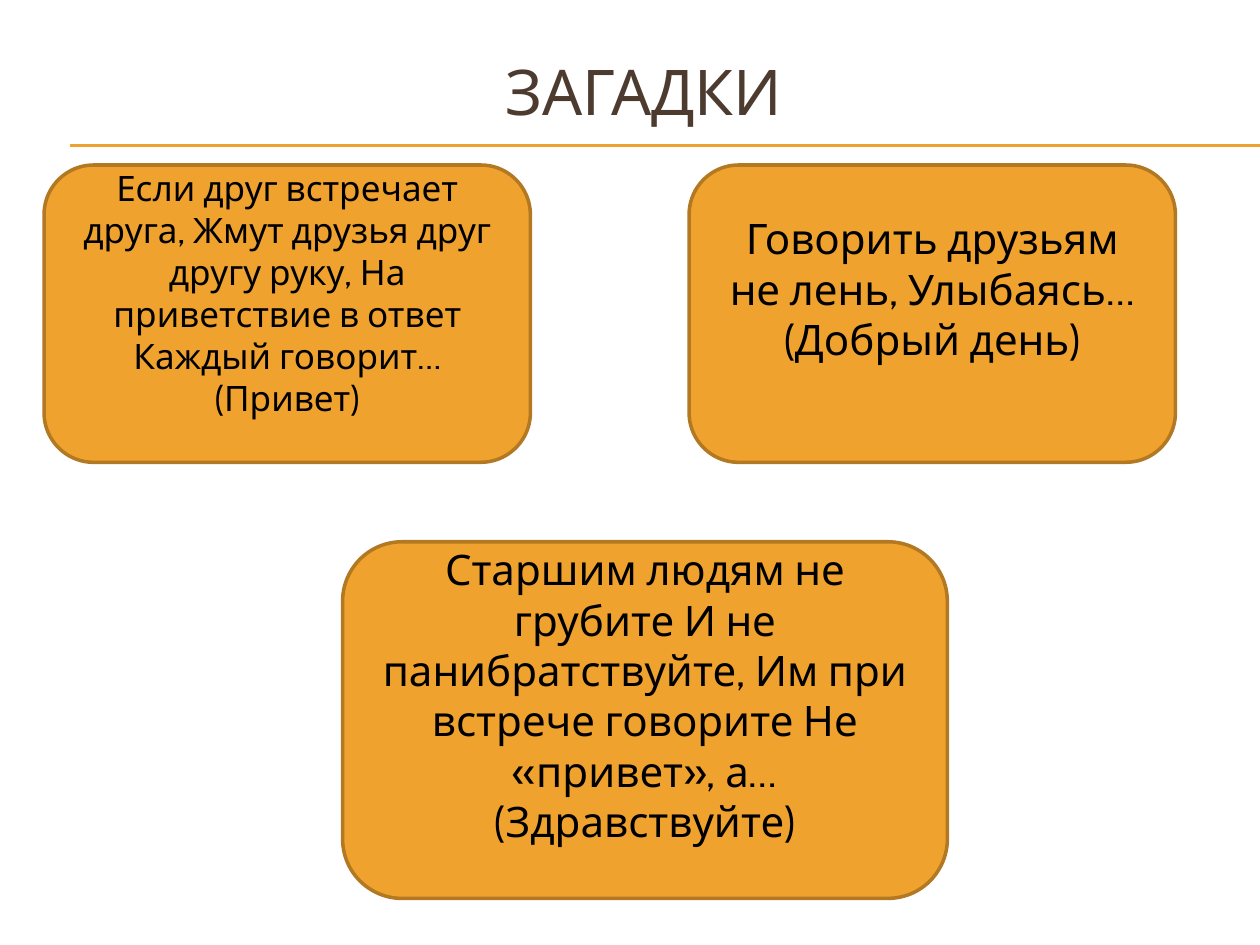
import dataclasses

import lxml.etree
import pptx
import pptx.dml.color
import pptx.enum.shapes
import pptx.enum.text
import pptx.oxml.ns
import pptx.util

Pt = pptx.util.Pt


@dataclasses.dataclass(frozen=True)
class Theme:
    font: str = "Cabin"
    title_color: str = "4E3B30"
    text_color: str = "000000"
    accent: str = "F0A22E"
    outline: str = "B27822"
    title_size: float = 36
    large_size: float = 24
    small_size: float = 20
    rule_width: float = 0.75
    outline_width: float = 2


def rgb(value):
    return pptx.dml.color.RGBColor.from_string(value)


def write_text(shape, text, *, font, size, color, bottom=3.6):
    """Write one centred paragraph, anchored in the middle of the shape."""
    frame = shape.text_frame
    frame.word_wrap = True
    frame.vertical_anchor = pptx.enum.text.MSO_ANCHOR.MIDDLE
    frame.margin_bottom = Pt(bottom)
    paragraph = frame.paragraphs[0]
    paragraph.alignment = pptx.enum.text.PP_ALIGN.CENTER
    run = paragraph.add_run()
    run.text = text
    run.font.name = font
    run.font.size = Pt(size)
    run.font.color.rgb = rgb(color)


class SlideBuilder:
    def __init__(self, slide, theme):
        self.slide = slide
        self.theme = theme

    def title(self, text, left, top, width, height):
        shape = self.slide.shapes.title
        shape.left, shape.top = Pt(left), Pt(top)
        shape.width, shape.height = Pt(width), Pt(height)
        write_text(shape, text, font=self.theme.font,
                   size=self.theme.title_size, color=self.theme.title_color)

    def rule(self, left, right, y):
        connector = self.slide.shapes.add_connector(
            pptx.enum.shapes.MSO_CONNECTOR.STRAIGHT,
            Pt(left), Pt(y), Pt(right), Pt(y))
        connector.line.color.rgb = rgb(self.theme.accent)
        connector.line.width = Pt(self.theme.rule_width)
        # An empty effect list switches the shadow off
        lxml.etree.SubElement(connector._element.spPr,
                              pptx.oxml.ns.qn("a:effectLst"))

    def riddle(self, text, size, left, top, width, height):
        shape = self.slide.shapes.add_shape(
            pptx.enum.shapes.MSO_SHAPE.ROUNDED_RECTANGLE,
            Pt(left), Pt(top), Pt(width), Pt(height))
        shape.shadow.inherit = False
        shape.fill.solid()
        shape.fill.fore_color.rgb = rgb(self.theme.accent)
        shape.line.color.rgb = rgb(self.theme.outline)
        shape.line.width = Pt(self.theme.outline_width)
        # Leave one line of space below the text
        write_text(shape, text, font=self.theme.font, size=size,
                   color=self.theme.text_color, bottom=3.6 + 1.2 * size)


def main():
    theme = Theme()
    presentation = pptx.Presentation()
    presentation.slide_width, presentation.slide_height = Pt(720), Pt(540)
    slide = presentation.slides.add_slide(presentation.slide_layouts[5])
    builder = SlideBuilder(slide, theme)

    # Title and the double rule below it
    builder.title("ЗАГАДКИ", 36, 15.1, 663.8, 73.4)
    for y in (82.8, 83.5):
        builder.rule(40.3, 720, y)

    # Riddles: two equal cards above, a larger one below
    top, width, height = 94.3, 277.9, 169.9
    builder.riddle("Если друг встречает друга, Жмут друзья друг другу руку, "
                   "На приветствие в ответ Каждый говорит… (Привет)",
                   theme.small_size, 25.2, top, width, height)
    builder.riddle("Старшим людям не грубите И не панибратствуйте, "
                   "Им при встрече говорите Не «привет», а… (Здравствуйте)",
                   theme.large_size, 195.8, 309.6, 345.6, 203.8)
    builder.riddle("Говорить друзьям не лень, Улыбаясь… (Добрый день)",
                   theme.large_size, 393.8, top, width, height)

    presentation.save("out.pptx")


if __name__ == "__main__":
    main()
